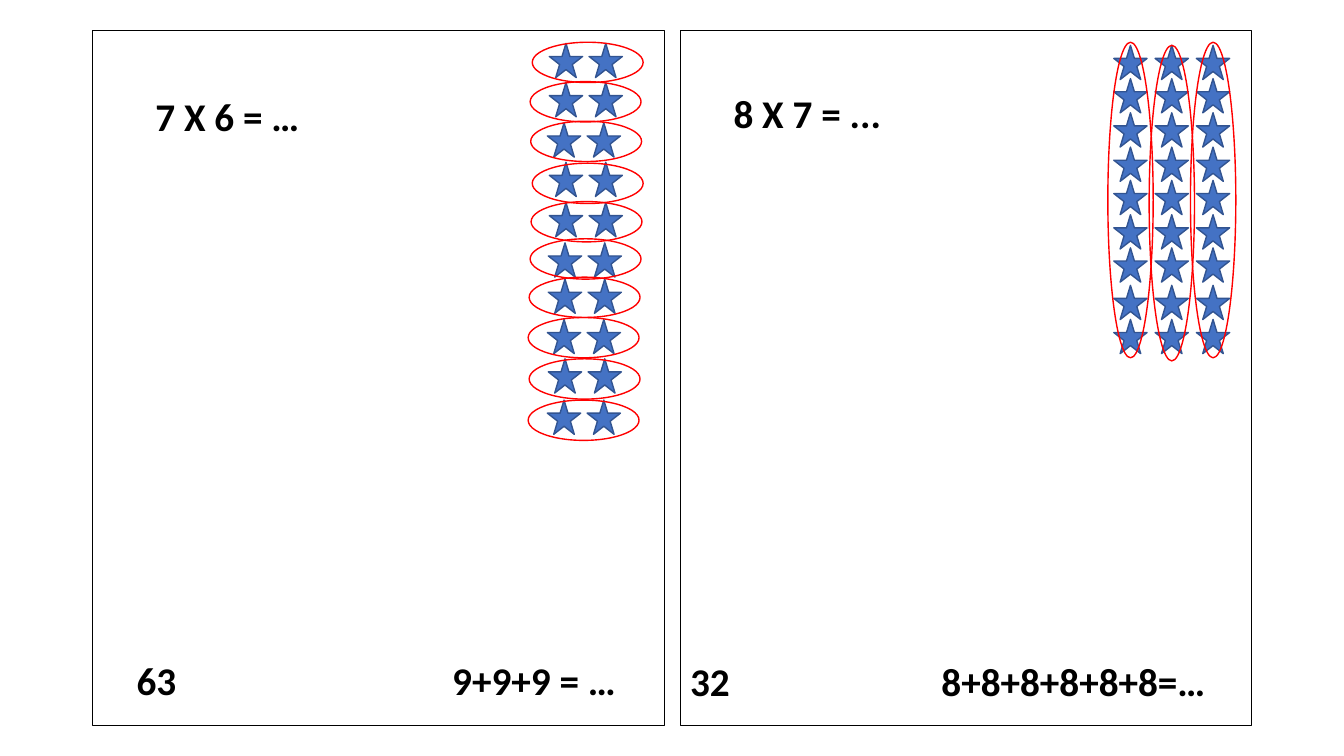
from pptx import Presentation
from pptx.dml.color import RGBColor
from pptx.enum import shapes, text
from pptx.util import Pt

BLACK = RGBColor(0, 0, 0)
RED = RGBColor(0xFF, 0, 0)
BLUE = RGBColor(0x44, 0x72, 0xC4)
NAVY = RGBColor(0x32, 0x54, 0x91)
KIND = shapes.MSO_SHAPE

deck = Presentation()
deck.slide_width, deck.slide_height = Pt(960), Pt(540)
slide = deck.slides.add_slide(deck.slide_layouts[6])


def draw(kind, box, line, width=1, fill=None, turn=0):
    shape = slide.shapes.add_shape(kind, *[Pt(n) for n in box])
    shape.shadow.inherit = False
    shape.rotation = turn
    shape.line.color.rgb = line
    shape.line.width = Pt(width)
    if fill is None:
        shape.fill.background()
    else:
        shape.fill.solid()
        shape.fill.fore_color.rgb = fill


def write(words, left, top, width, size=28, color=BLACK, bold=True):
    box = slide.shapes.add_textbox(Pt(left), Pt(top), Pt(width), Pt(35))
    frame = box.text_frame
    frame.word_wrap = True
    frame.vertical_anchor = text.MSO_ANCHOR.TOP
    frame.margin_left = frame.margin_right = 0
    frame.margin_top = frame.margin_bottom = 0
    par = frame.paragraphs[0]
    run = par.add_run()
    run.text = words
    run.font.name = "Calibri"
    run.font.size = Pt(size)
    run.font.bold = bold
    run.font.color.rgb = color


# Two cards with their sums
for left in (66.2, 486):
    draw(KIND.RECTANGLE, (left, 21.6, 408.2, 496.8), BLACK, 0.75)

for words, left, top, width in (
    ("7 X 6 = …", 111, 66, 180),
    ("63", 97.5, 468.5, 60),
    ("9+9+9 = …", 323, 468.5, 145),
    ("8 X 7 = ...", 524, 63.5, 180),
    ("32", 493, 469.5, 60),
    ("8+8+8+8+8+8=…", 672.5, 469.5, 215),
):
    write(words, left, top, width)

# Right card: three columns of nine stars, each column ringed
STAR = (23.8, 24.5)
tops = (32.4, 56.2, 80.6, 105.1, 128.9, 153.4, 177.1, 203.8, 228.2)
step = 29.5
for col in range(3):
    for top in tops:
        draw(KIND.STAR_5_POINT, (795.6 + col * step, top, *STAR), NAVY, fill=BLUE)
for col, top in enumerate((126.7, 128.9, 126.7)):
    draw(KIND.OVAL, (694.8 + col * step, top, 225.4, 32.4), RED, turn=90)

# Left card: ten pairs of stars (left, top), each with its ring (left, top)
pairs = (
    (392.4, 31, 380.2, 30.2),
    (392.4, 59, 378.7, 58.3),
    (391, 87.8, 379.1, 86.6),
    (392.4, 115.9, 380.2, 116.6),
    (392.4, 144.7, 379.4, 144),
    (391.7, 173.5, 378.7, 170.6),
    (391.7, 199.4, 378, 198),
    (391, 228.2, 377.3, 226.8),
    (391.7, 256.3, 378, 256.3),
    (391, 285.8, 377.3, 285.8),
)
for left, top, *_ in pairs:
    for shift in (0, 28.4):
        draw(KIND.STAR_5_POINT, (left + shift, top, *STAR), NAVY, fill=BLUE)
for *_, left, top in pairs:
    draw(KIND.OVAL, (left, top, 79.2, 28.8), RED)

deck.save("out.pptx")
